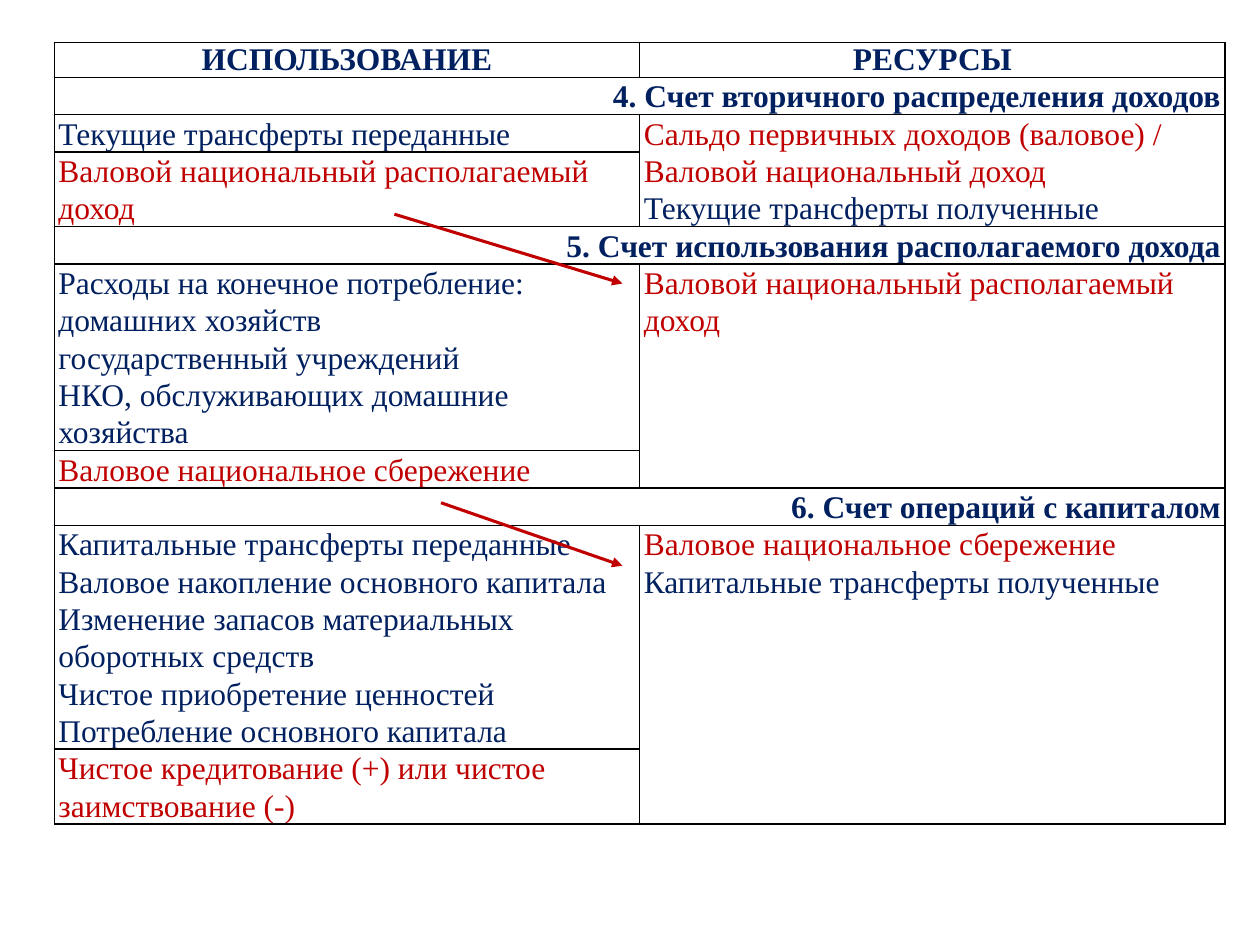
from lxml import etree
from pptx import Presentation
from pptx.dml.color import RGBColor
from pptx.enum.shapes import MSO_CONNECTOR
from pptx.enum.text import PP_ALIGN
from pptx.oxml import parse_xml
from pptx.oxml.ns import nsdecls, qn
from pptx.util import Pt

NAVY = RGBColor(0x00, 0x20, 0x60)
RED = RGBColor(0xC0, 0x00, 0x00)
FONT = "Times New Roman"
BORDER = "000000"

# Content: cells are lists of (text, colour) paragraphs
INCOME = ("Валовой национальный располагаемый доход", RED)
SAVING = ("Валовое национальное сбережение", RED)
HEADERS = ["ИСПОЛЬЗОВАНИЕ", "РЕСУРСЫ"]
# Account: title, uses, balancing item, resources, text lines in the two rows
ACCOUNTS = [
    ("4. Счет вторичного распределения доходов",
     [("Текущие трансферты переданные", NAVY)],
     [INCOME],
     [("Сальдо первичных доходов (валовое) / Валовой национальный доход", RED),
      ("Текущие трансферты полученные", NAVY)],
     (1, 2)),
    ("5. Счет использования располагаемого дохода",
     [("Расходы на конечное потребление:", NAVY),
      ("домашних хозяйств", NAVY),
      ("государственный учреждений", NAVY),
      ("НКО, обслуживающих домашние хозяйства", NAVY)],
     [SAVING],
     [INCOME],
     (5, 1)),
    ("6. Счет операций с капиталом",
     [("Капитальные трансферты переданные", NAVY),
      ("Валовое накопление основного капитала", NAVY),
      ("Изменение запасов материальных оборотных средств", NAVY),
      ("Чистое приобретение ценностей", NAVY),
      ("Потребление основного капитала", NAVY)],
     [("Чистое кредитование (+) или чистое заимствование (-)", RED)],
     [SAVING, ("Капитальные трансферты полученные", NAVY)],
     (6, 2)),
]
ARROWS = [((225.4, 122.4), (355.7, 162)), ((252, 287.3), (355.7, 323.3))]

# Geometry
LEFT, TOP, COL_W = 31, 24.2, 334.5
HEADER_H, LINE_H = 20, 21.3


def write(cell, paragraphs, align=PP_ALIGN.LEFT, bold=False, spacing=1.07):
    tf = cell.text_frame
    for i, (text, color) in enumerate(paragraphs):
        p = tf.add_paragraph() if i else tf.paragraphs[0]
        p.alignment = align
        p.line_spacing = spacing
        r = p.add_run()
        r.text = text
        r.font.name = FONT
        r.font.size = Pt(18)
        r.font.bold = bold
        r.font.color.rgb = color


def style_cell(cell):
    cell.margin_left = cell.margin_right = Pt(2.4)
    cell.margin_top = cell.margin_bottom = Pt(0)
    tc_pr = cell._tc.get_or_add_tcPr()
    for side in ("lnL", "lnR", "lnT", "lnB"):
        tc_pr.append(parse_xml(
            f'<a:{side} {nsdecls("a")} w="{Pt(1)}"><a:solidFill>'
            f'<a:srgbClr val="{BORDER}"/></a:solidFill></a:{side}>'))
    cell.fill.background()


def add_arrow(slide, start, end):
    line = slide.shapes.add_connector(
        MSO_CONNECTOR.STRAIGHT, *(Pt(v) for v in start + end))
    line.line.color.rgb = RED
    line.line.width = Pt(1.75)
    etree.SubElement(line.line._get_or_add_ln(), qn("a:tailEnd"), type="triangle")
    etree.SubElement(line._element.spPr, qn("a:effectLst"))


prs = Presentation()
prs.slide_width, prs.slide_height = Pt(720), Pt(540)
s = prs.slides.add_slide(prs.slide_layouts[6])

# Table frame
heights = [HEADER_H]
for *_, (use_lines, balance_lines) in ACCOUNTS:
    heights += [LINE_H, LINE_H * use_lines, LINE_H * balance_lines]
table = s.shapes.add_table(len(heights), 2, Pt(LEFT), Pt(TOP),
                           Pt(2 * COL_W), Pt(sum(heights))).table
table.first_row = table.horz_banding = False
for col in table.columns:
    col.width = Pt(COL_W)
for row, height in zip(table.rows, heights):
    row.height = Pt(height)
for cell in table.iter_cells():
    style_cell(cell)

# Header row
for c, title in enumerate(HEADERS):
    write(table.cell(0, c), [(title, NAVY)], align=PP_ALIGN.CENTER, bold=True, spacing=1.0)

# Three rows per account: title, uses, balancing item
for i, (title, uses, balance, resources, _) in enumerate(ACCOUNTS):
    top = 1 + 3 * i
    table.cell(top, 0).merge(table.cell(top, 1))
    table.cell(top + 1, 1).merge(table.cell(top + 2, 1))
    write(table.cell(top, 0), [(title, NAVY)], align=PP_ALIGN.RIGHT, bold=True)
    write(table.cell(top + 1, 0), uses)
    write(table.cell(top + 2, 0), balance)
    write(table.cell(top + 1, 1), resources)

# Arrows carry each balancing item to the next account
for start, end in ARROWS:
    add_arrow(s, start, end)

prs.save("out.pptx")
